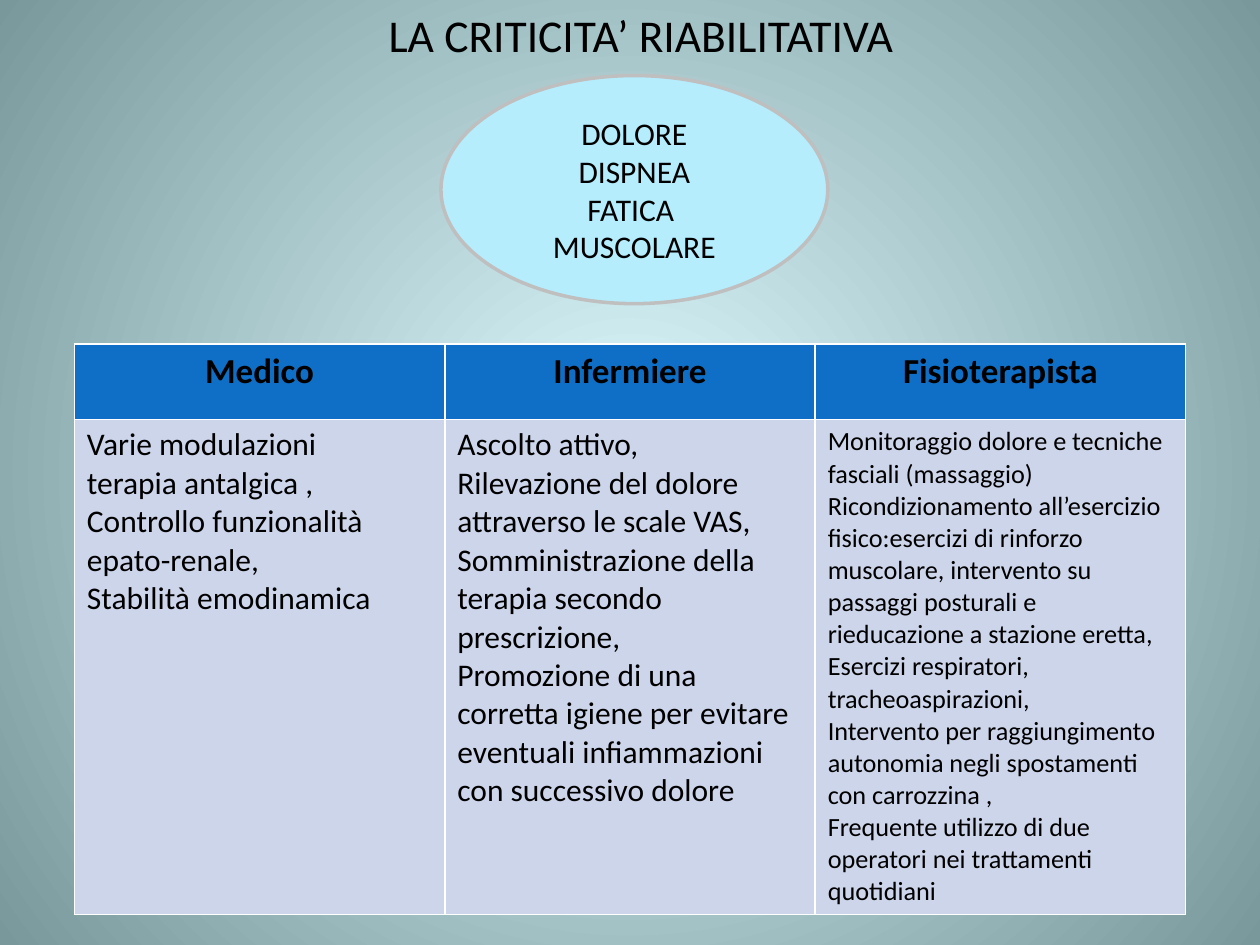
from dataclasses import dataclass

from lxml import etree
from pptx import Presentation
from pptx import util as u
from pptx.dml.color import RGBColor
from pptx.enum import shapes, text
from pptx.oxml import ns


@dataclass(frozen=True)
class Theme:
    font: str = "Calibri"
    ink: str = "000000"
    glow: str = "DEFBFF"
    edge: str = "79989C"
    header: str = "0F6FC6"
    body: str = "CCD5EA"
    border: str = "FFFFFF"
    oval: str = "B5EDFD"
    outline: str = "BFBFBF"
    title_size: int = 26
    header_size: int = 20
    body_size: int = 18
    dense_size: int = 15


THEME = Theme()
WIDTH, HEIGHT = 10, 7.5
MARGIN = 0.59
TABLE_TOP = 2.73
ROW_HEIGHTS = (0.6, 3.89)

SYMPTOMS = ["DOLORE", "DISPNEA", "FATICA ", "MUSCOLARE"]

# Each role: heading, type size, paragraphs
ROLES = [
    ("Medico", THEME.body_size, [
        "Varie modulazioni \nterapia antalgica ,",
        "Controllo funzionalità \nepato-renale,",
        "Stabilità emodinamica",
    ]),
    ("Infermiere", THEME.body_size, [
        "Ascolto attivo,",
        "Rilevazione del dolore attraverso le scale VAS, "
        "Somministrazione della terapia secondo prescrizione,",
        "Promozione di una corretta igiene per evitare eventuali "
        "infiammazioni con successivo dolore",
    ]),
    ("Fisioterapista", THEME.dense_size, [
        "Monitoraggio dolore e tecniche fasciali (massaggio)",
        "Ricondizionamento all’esercizio fisico:esercizi di rinforzo "
        "muscolare, intervento su passaggi posturali e rieducazione "
        "a stazione eretta,",
        "Esercizi respiratori, tracheoaspirazioni,",
        "Intervento per raggiungimento autonomia negli spostamenti "
        "con carrozzina ,",
        "Frequente utilizzo di due operatori nei trattamenti quotidiani",
    ]),
]


def color(value):
    return RGBColor.from_string(value)


def apply(target, values):
    for name, value in values.items():
        setattr(target, name, value)


def place(left, top, width, height):
    return [u.Inches(length) for length in (left, top, width, height)]


def write(frame, lines, size, bold=False, align=text.PP_ALIGN.CENTER):
    frame.word_wrap = True
    for index, line in enumerate(lines):
        para = frame.paragraphs[0] if index == 0 else frame.add_paragraph()
        para.text = line
        para.alignment = align
        for span in para.runs:
            apply(span.font, {"name": THEME.font, "size": u.Pt(size), "bold": bold})
            span.font.color.rgb = color(THEME.ink)


def paint_background(page):
    fill = page.background.fill
    fill.gradient()
    for stop, value in zip(fill.gradient_stops, (THEME.glow, THEME.edge)):
        stop.color.rgb = color(value)
    # Turn the linear gradient into a circular one around the centre
    gradient = page.background._cSld.find(".//" + ns.qn("a:gradFill"))
    gradient.remove(gradient.find(ns.qn("a:lin")))
    circle = etree.SubElement(gradient, ns.qn("a:path"), path="circle")
    sides = dict.fromkeys("ltrb", "50000")
    etree.SubElement(circle, ns.qn("a:fillToRect"), sides)


def add_title(page, words):
    title = page.shapes.title
    box = place(MARGIN, 0, 9, 0.54)
    apply(title, dict(zip(("left", "top", "width", "height"), box)))
    title.text_frame.vertical_anchor = text.MSO_ANCHOR.MIDDLE
    write(title.text_frame, [words], THEME.title_size)


def add_oval(page, lines):
    oval = page.shapes.add_shape(
        shapes.MSO_SHAPE.OVAL, *place(3.5, 0.6, 3.07, 1.81))
    oval.shadow.inherit = False
    oval.fill.solid()
    oval.fill.fore_color.rgb = color(THEME.oval)
    oval.line.color.rgb = color(THEME.outline)
    oval.line.width = u.Pt(2)
    oval.text_frame.vertical_anchor = text.MSO_ANCHOR.MIDDLE
    write(oval.text_frame, lines, THEME.body_size)


def style_cell(cell, fill):
    # Borders come before the fill in the cell properties
    properties = cell._tc.get_or_add_tcPr()
    for side in ("lnL", "lnR", "lnT", "lnB"):
        line = etree.SubElement(properties, ns.qn("a:" + side), w=str(u.Pt(1)))
        solid = etree.SubElement(line, ns.qn("a:solidFill"))
        etree.SubElement(solid, ns.qn("a:srgbClr"), val=THEME.border)
    cell.fill.solid()
    cell.fill.fore_color.rgb = color(fill)


def add_roles_table(page, roles):
    box = place(MARGIN, TABLE_TOP, WIDTH - 2 * MARGIN, sum(ROW_HEIGHTS))
    table = page.shapes.add_table(len(ROW_HEIGHTS), len(roles), *box).table
    for row, height in zip(table.rows, ROW_HEIGHTS):
        row.height = u.Inches(height)
    for column, (heading, size, lines) in enumerate(roles):
        head, body = table.cell(0, column), table.cell(1, column)
        style_cell(head, THEME.header)
        style_cell(body, THEME.body)
        write(head.text_frame, [heading], THEME.header_size, bold=True)
        write(body.text_frame, lines, size, align=text.PP_ALIGN.LEFT)


def main():
    deck = Presentation()
    apply(deck, {"slide_width": u.Inches(WIDTH), "slide_height": u.Inches(HEIGHT)})
    page = deck.slides.add_slide(deck.slide_layouts.get_by_name("Title Only"))
    paint_background(page)
    add_title(page, "LA CRITICITA’ RIABILITATIVA")
    add_roles_table(page, ROLES)
    add_oval(page, SYMPTOMS)
    deck.save("out.pptx")


if __name__ == "__main__":
    main()
